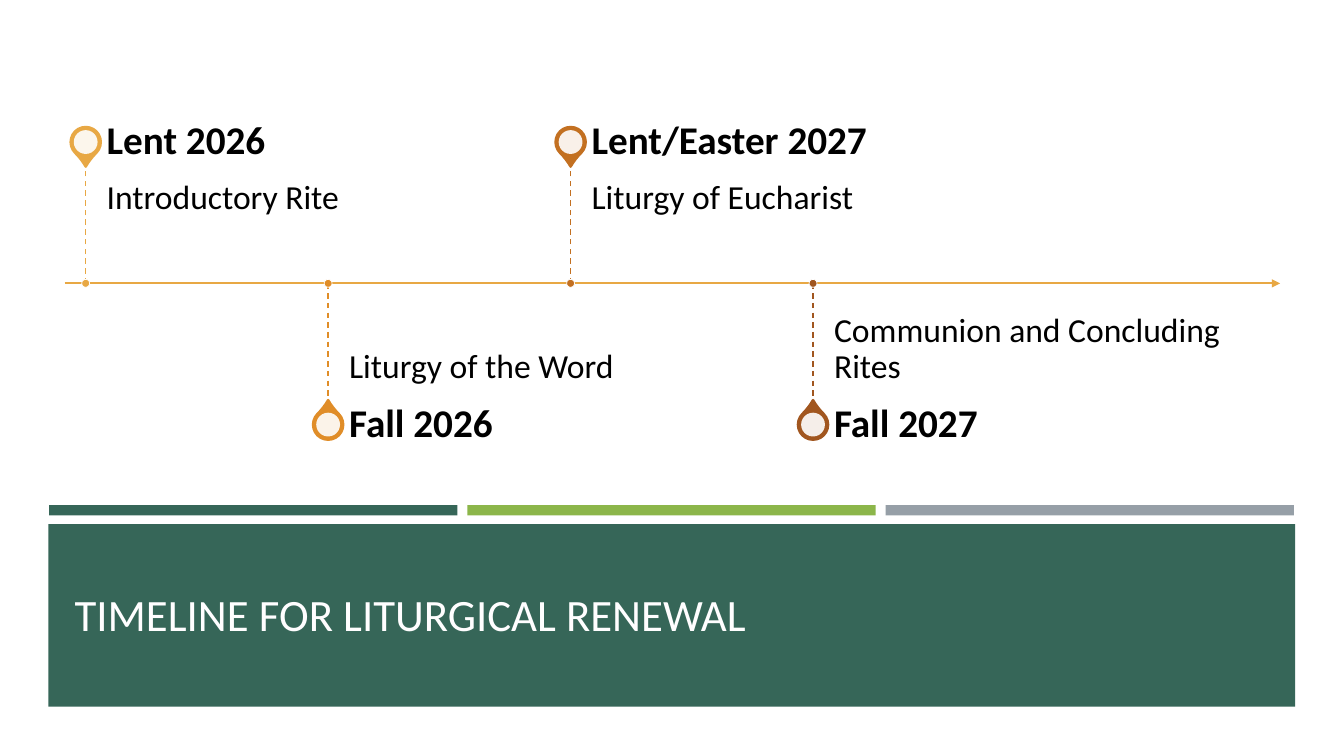
from lxml import etree
from pptx import Presentation
from pptx.dml.color import RGBColor
from pptx.enum.dml import MSO_LINE
from pptx.enum.shapes import MSO_CONNECTOR, MSO_SHAPE
from pptx.enum.text import MSO_ANCHOR, MSO_AUTO_SIZE, PP_ALIGN
from pptx.oxml.ns import qn
from pptx.util import Cm, Pt

RECT, OVAL, TEAR = MSO_SHAPE.RECTANGLE, MSO_SHAPE.OVAL, MSO_SHAPE.TEAR
TOP, MIDDLE, BOTTOM = MSO_ANCHOR.TOP, MSO_ANCHOR.MIDDLE, MSO_ANCHOR.BOTTOM
STRAIGHT, DASH = MSO_CONNECTOR.STRAIGHT, MSO_LINE.DASH

COLORS = {
    "green": "366658", "lime": "8CB64A", "grey": "969FA7",
    "amber": "E8A844", "orange": "E08D28", "rust": "C37021", "brown": "A1561F",
    "white": "FFFFFF", "title": "FFFEFF", "black": "000000",
}
MILESTONES = [
    ("Lent 2026", "Introductory Rite", "amber"),
    ("Fall 2026", "Liturgy of the Word", "orange"),
    ("Lent/Easter 2027", "Liturgy of Eucharist", "rust"),
    ("Fall 2027", "Communion and Concluding Rites", "brown"),
]
AXIS_Y = 7.14
FIRST_X, STEP_X = 2.16, 6.11
STEM, HEADING_H = 3.02, 1.07
TEXT_GAP, TEXT_W = 0.53, 10.19

prs = Presentation()
prs.slide_width, prs.slide_height = Cm(33.87), Cm(19.05)
slide = prs.slides.add_slide(prs.slide_layouts[5])


def draw(kind, left, top, width, height, fill, line=None, weight=1):
    shape = slide.shapes.add_shape(kind, Cm(left), Cm(top), Cm(width), Cm(height))
    shape.shadow.inherit = False
    shape.fill.solid()
    shape.fill.fore_color.rgb = RGBColor.from_string(COLORS[fill])
    if line:
        shape.line.color.rgb = RGBColor.from_string(COLORS[line])
        shape.line.width = Pt(weight)
    else:
        shape.line.fill.background()
    return shape


def write(box, text, *, size, color="black", bold=False, anchor=TOP,
          insets=(0, 0, 0, 0)):
    """Fill box with one paragraph; insets are left, top, right, bottom in cm."""
    frame = box.text_frame
    frame.text = text
    frame.word_wrap = True
    frame.auto_size = MSO_AUTO_SIZE.NONE
    frame.vertical_anchor = anchor
    (frame.margin_left, frame.margin_top,
     frame.margin_right, frame.margin_bottom) = map(Cm, insets)
    paragraph = frame.paragraphs[0]
    paragraph.alignment = PP_ALIGN.LEFT
    paragraph.line_spacing = 0.9
    font = paragraph.runs[0].font
    font.name, font.size, font.bold = "Calibri", Pt(size), bold
    font.color.rgb = RGBColor.from_string(COLORS[color])


# Title panel under three colour bars
for i, bar_color in enumerate(("green", "lime", "grey")):
    draw(RECT, 1.24 + i * 10.54, 12.73, 10.29, 0.26, bar_color)
draw(RECT, 1.22, 13.21, 31.42, 4.6, "green")

title = slide.shapes.title
title.left, title.top, title.width, title.height = Cm(1.63), Cm(13.46), Cm(30.63), Cm(2.82)
write(title, "TIMELINE FOR LITURGICAL RENEWAL", size=32, color="title",
      anchor=BOTTOM, insets=(0.25, 0.13, 0.25, 0.13))
slide.shapes._spTree.append(title._element)

# Axis and the dashed stems, alternating above and below it
lines = [(1.63, AXIS_Y, 32.26, AXIS_Y, "amber", 1.5)]
for i, (_, _, color) in enumerate(MILESTONES):
    x = FIRST_X + i * STEP_X
    stem_end = AXIS_Y + (STEM if i % 2 else -STEM)
    lines.append((x, AXIS_Y, x, stem_end, color, 1))

for x1, y1, x2, y2, color, weight in lines:
    connector = slide.shapes.add_connector(STRAIGHT, Cm(x1), Cm(y1), Cm(x2), Cm(y2))
    connector.line.color.rgb = RGBColor.from_string(COLORS[color])
    connector.line.width = Pt(weight)
    if x1 == x2:
        connector.line.dash_style = DASH
    else:
        etree.SubElement(connector.line._ln, qn("a:tailEnd"), type="triangle")
    etree.SubElement(connector._element.spPr, qn("a:effectLst"))

# Pins, dots and texts
for i, (date, rite, color) in enumerate(MILESTONES):
    below = i % 2 == 1
    x = FIRST_X + i * STEP_X
    pin_y = AXIS_Y + (3.56 if below else -3.56)
    pin = draw(TEAR, x - 0.38, pin_y - 0.38, 0.76, 0.76, color, color, 1.75)
    pin.adjustments[0] = 1.15
    pin.rotation = 315 if below else 135
    center = draw(OVAL, x - 0.3, pin_y - 0.3, 0.6, 0.6, "white")
    white = center.fill._xPr.find(qn("a:solidFill"))[0]
    etree.SubElement(white, qn("a:alpha"), val="90000")
    draw(OVAL, x - 0.1, AXIS_Y - 0.1, 0.2, 0.2, color, "white", 0.5)

    text_x = Cm(x + TEXT_GAP)
    rite_top = AXIS_Y if below else AXIS_Y - STEM
    date_top = AXIS_Y + STEM if below else AXIS_Y - STEM - HEADING_H
    rite_box = slide.shapes.add_textbox(text_x, Cm(rite_top), Cm(TEXT_W), Cm(STEM))
    write(rite_box, rite, size=24, anchor=BOTTOM if below else TOP,
          insets=(0, 0.64, 0, 0.43) if below else (0, 0.43, 0.43, 0.64))
    date_box = slide.shapes.add_textbox(text_x, Cm(date_top), Cm(TEXT_W), Cm(HEADING_H))
    write(date_box, date, size=28, bold=True, anchor=MIDDLE, insets=(0, 0, 0.48, 0))

prs.save("out.pptx")
